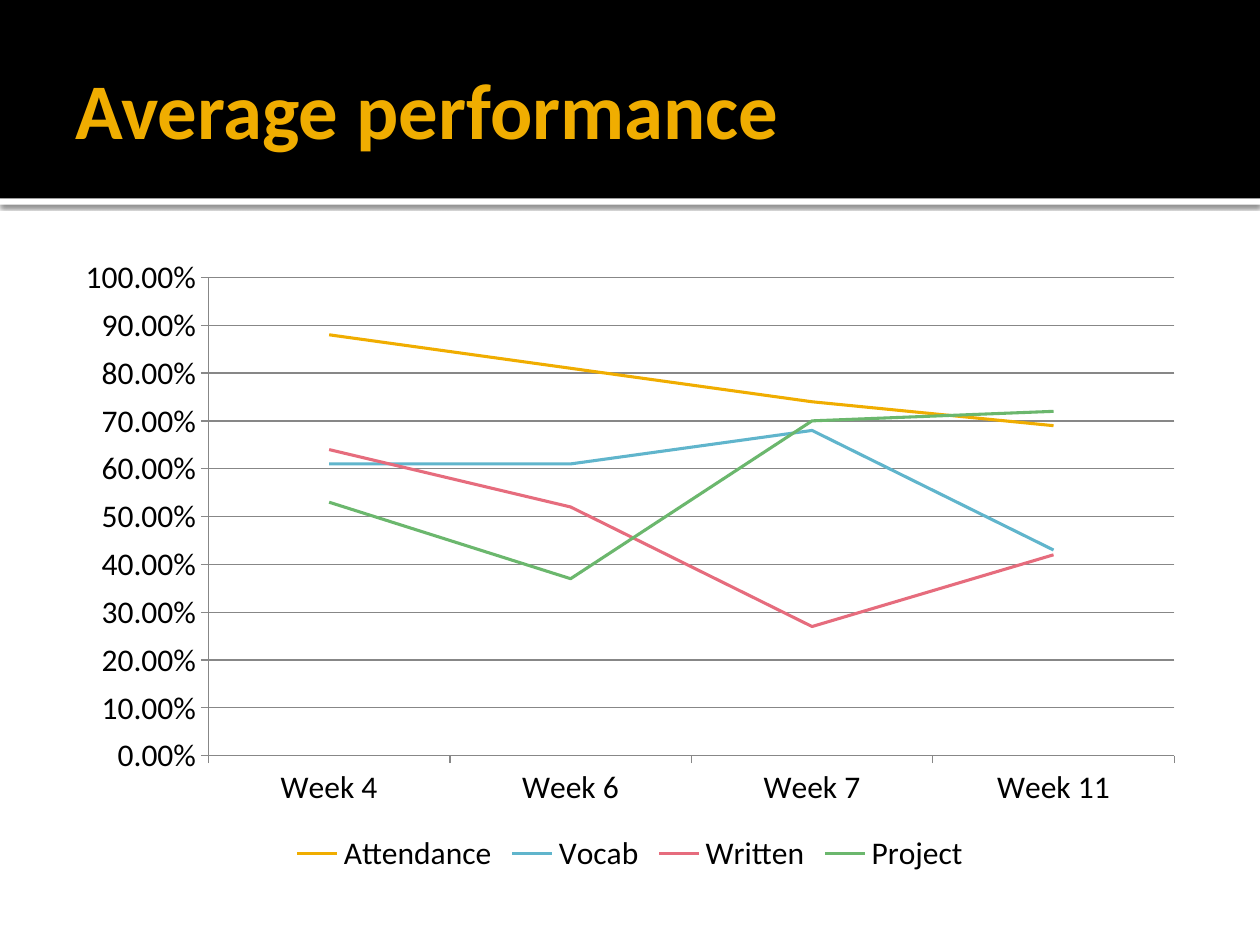
from lxml.etree import SubElement
from pptx import Presentation
from pptx.chart.data import CategoryChartData
from pptx.dml.color import RGBColor
from pptx.enum.chart import XL_CHART_TYPE as ChartType, XL_LEGEND_POSITION as LegendSide
from pptx.enum.chart import XL_TICK_MARK as TickMark
from pptx.enum.shapes import MSO_SHAPE as Shape
from pptx.enum.text import MSO_ANCHOR as Anchor
from pptx.oxml.ns import qn
from pptx.util import Inches, Pt

COLORS = {
    "paper": "FFFFFF", "band": "000000", "title": "F0AD00", "text": "000000", "grid": "878787",
    "Attendance": "F0AD00", "Vocab": "60B5CC", "Written": "E66C7D", "Project": "6BB76D",
}
FONT = "Calibri"
WIDTH, HEIGHT = Inches(10), Inches(7.5)
MARGIN = 0.05
WEEKS = ["Week 4", "Week 6", "Week 7", "Week 11"]
SCORES = {
    "Attendance": [0.88, 0.81, 0.74, 0.69],
    "Vocab": [0.61, 0.61, 0.68, 0.43],
    "Written": [0.64, 0.52, 0.27, 0.42],
    "Project": [0.53, 0.37, 0.7, 0.72],
}


def color(name):
    """Return the palette colour with the given name."""
    return RGBColor.from_string(COLORS[name])


def share(left, top, width, height):
    """Turn shares of the slide's size into a box."""
    return int(left * WIDTH), int(top * HEIGHT), int(width * WIDTH), int(height * HEIGHT)


def style_font(font, size, name, bold=False):
    """Set typeface, size, colour and weight."""
    font.name, font.size, font.bold = FONT, Pt(size), bold
    font.color.rgb = color(name)


def add_bar(page, box, name):
    """Add a plain filled rectangle."""
    bar = page.shapes.add_shape(Shape.RECTANGLE, *box)
    bar.shadow.inherit = False
    bar.fill.solid()
    bar.fill.fore_color.rgb = color(name)
    bar.line.fill.background()
    return bar


def add_drop_shadow(shape):
    """Cast a soft shadow straight down from a shape."""
    effects = shape.element.spPr.find(qn("a:effectLst"))
    shadow = SubElement(effects, qn("a:outerShdw"), blurRad=str(Pt(2.5)),
                        dist=str(Pt(0.8)), dir="5400000", algn="tl", rotWithShape="0")
    tone = SubElement(shadow, qn("a:srgbClr"), val=COLORS["band"])
    SubElement(tone, qn("a:alpha"), val="60000")


def add_header(page, box, title):
    """Add the dark band with its white rule below and its title."""
    left, top, width, height = box
    rule = add_bar(page, (left, top + height, width, Inches(0.05)), "paper")
    add_drop_shadow(rule)
    add_bar(page, box, "band")
    inset = int(MARGIN * width)
    label = page.shapes.add_textbox(left + inset, top + int(0.11 * height),
                                    width - 2 * inset, int(0.87 * height))
    frame = label.text_frame
    frame.word_wrap = True
    frame.vertical_anchor = Anchor.MIDDLE
    frame.margin_left = Inches(0.1)
    frame.margin_right = frame.margin_top = frame.margin_bottom = Inches(0.05)
    para = frame.paragraphs[0]
    para.text = title
    style_font(para.font, 45, "title", bold=True)


def style_line(line, name, width):
    """Set the colour and width of a line."""
    line.color.rgb = color(name)
    line.width = Pt(width)


def add_performance_chart(page, box):
    """Add the line chart of weekly scores."""
    data = CategoryChartData(number_format="0.00%")
    data.categories = WEEKS
    for name, values in SCORES.items():
        data.add_series(name, values)
    chart = page.shapes.add_chart(ChartType.LINE, *box, data).chart
    style_font(chart.font, 18, "text")
    chart.has_title = False
    chart.has_legend = True
    chart.legend.position = LegendSide.BOTTOM
    chart.legend.include_in_layout = False
    for axis in (chart.category_axis, chart.value_axis):
        axis.major_tick_mark = TickMark.OUTSIDE
        axis.minor_tick_mark = TickMark.NONE
        style_line(axis.format.line, "grid", 0.75)
    scale = chart.value_axis
    scale.minimum_scale, scale.maximum_scale, scale.major_unit = 0, 1, 0.1
    scale.tick_labels.number_format = "0.00%"
    scale.tick_labels.number_format_is_linked = False
    scale.has_major_gridlines = True
    style_line(scale.major_gridlines.format.line, "grid", 0.75)
    chart.plots[0].vary_by_categories = False
    for series in chart.plots[0].series:
        series.smooth = False
        style_line(series.format.line, series.name, 1.75)


def main():
    """Build the slide and save it."""
    deck = Presentation()
    deck.slide_width, deck.slide_height = WIDTH, HEIGHT
    page = deck.slides.add_slide(deck.slide_layouts[6])
    page.background.fill.solid()
    page.background.fill.fore_color.rgb = color("paper")
    add_header(page, share(0, 0, 1, 0.21), "Average performance")
    add_performance_chart(page, share(MARGIN, 0.26, 1 - 2 * MARGIN, 0.67))
    deck.save("out.pptx")


if __name__ == "__main__":
    main()
